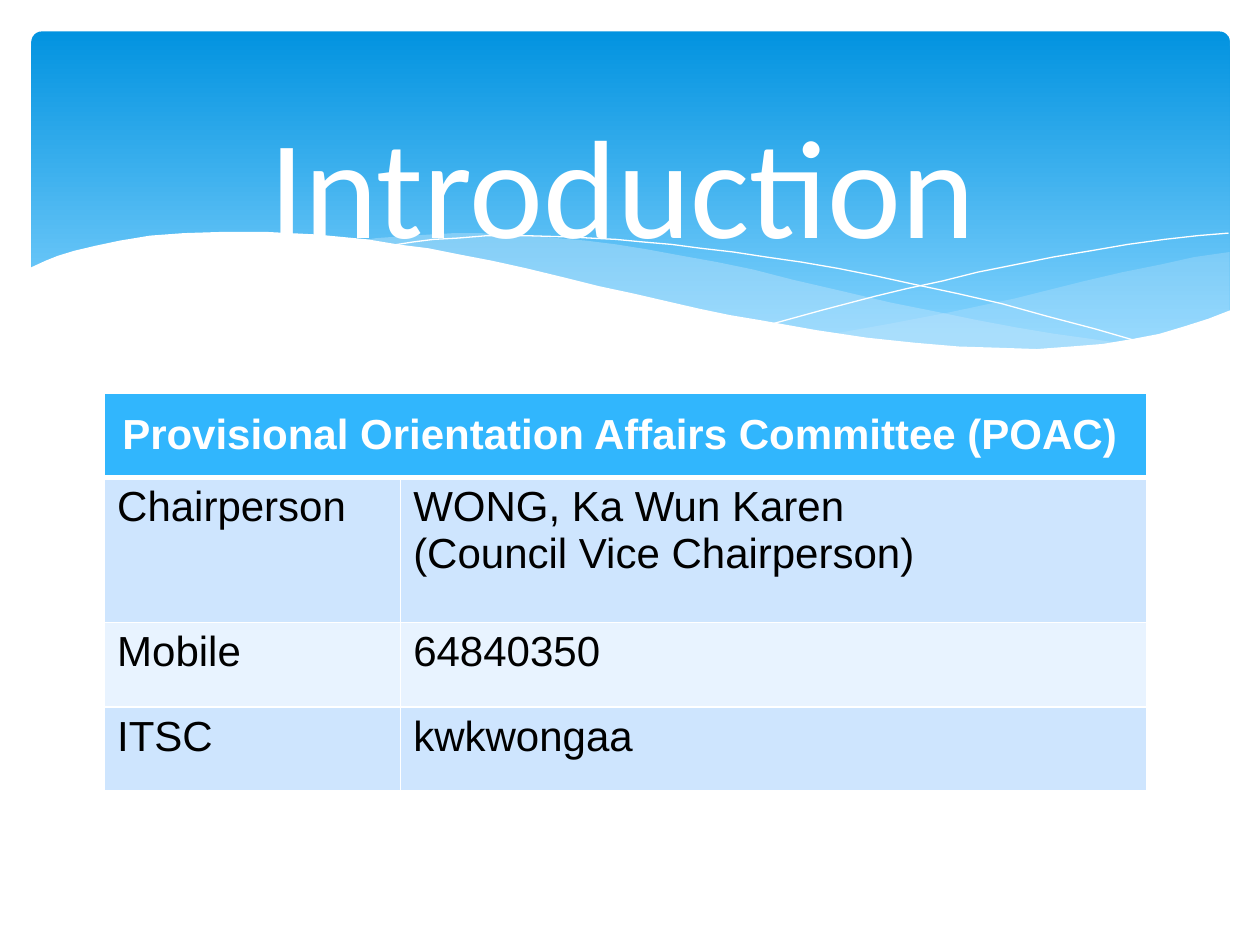
from lxml.etree import SubElement
from pptx import Presentation
from pptx.dml.color import RGBColor
from pptx.enum.shapes import MSO_SHAPE as Preset
from pptx.enum.text import MSO_ANCHOR as Anchor, PP_ALIGN as Align
from pptx.oxml.ns import qn
from pptx.util import Inches, Pt

WHITE = RGBColor(0xFF, 0xFF, 0xFF)
BLACK = RGBColor(0, 0, 0)
DEEP_BLUE = RGBColor(0x02, 0x93, 0xE0)
LIGHT_BLUE = RGBColor(0x83, 0xD3, 0xFE)
WAVE_BLUE = RGBColor(0xC6, 0xE7, 0xFC)
HEADER_BLUE = RGBColor(0x31, 0xB6, 0xFD)
BANDS = RGBColor(0xCE, 0xE5, 0xFE), RGBColor(0xE8, 0xF3, 0xFF)

RIGHT_WAVE = [
    (9.76, 2), (9.48, 2.04), (9.21, 2.1), (8.91, 2.16), (8.61, 2.23), (8.05, 2.37),
    (7.53, 2.48), (7.06, 2.57), (6.61, 2.65), (6.91, 2.69), (7.19, 2.72), (7.45, 2.75),
    (7.69, 2.77), (8.03, 2.78), (8.35, 2.77), (8.63, 2.75), (8.89, 2.72), (9.13, 2.67),
    (9.35, 2.62), (9.49, 2.57), (9.63, 2.52), (9.76, 2.47)]
CENTER_WAVE = [
    (8.93, 2.73), (8.66, 2.69), (8.37, 2.65), (8.07, 2.6), (7.75, 2.54), (7.41, 2.47),
    (7.06, 2.4), (6.68, 2.31), (6.29, 2.22), (5.98, 2.14), (5.69, 2.08), (5.41, 2.03),
    (5.14, 1.98), (4.89, 1.94), (4.65, 1.91), (4.42, 1.89), (4.2, 1.87), (3.99, 1.86),
    (3.8, 1.85), (3.61, 1.85), (3.28, 1.87), (2.99, 1.89), (2.86, 1.91), (3.23, 1.96),
    (3.62, 2.03), (4.04, 2.11), (4.49, 2.22), (4.91, 2.32), (5.3, 2.4), (5.66, 2.48),
    (6.01, 2.55), (6.34, 2.61), (6.65, 2.66), (6.95, 2.7), (7.22, 2.74), (7.48, 2.76),
    (7.73, 2.77), (7.96, 2.78), (8.38, 2.78), (8.67, 2.76)]
FALLING_LINE = [
    (3.09, 1.95), (3.28, 1.92), (3.44, 1.9), (3.63, 1.89), (3.87, 1.87), (4.16, 1.87),
    (4.5, 1.88), (4.89, 1.9), (5.1, 1.92), (5.33, 1.94), (5.56, 1.97), (5.82, 2),
    (6.08, 2.04), (6.36, 2.08), (6.65, 2.13), (6.95, 2.19), (7.27, 2.26), (7.6, 2.33),
    (7.95, 2.41), (8.31, 2.51), (8.69, 2.61), (9.07, 2.72)]
RISING_LINE = [
    (6.13, 2.57), (6.53, 2.46), (6.95, 2.35), (7.2, 2.29), (7.48, 2.23), (7.76, 2.16),
    (8.06, 2.1), (8.36, 2.04), (8.66, 1.99), (8.95, 1.94), (9.24, 1.9), (9.51, 1.87),
    (9.75, 1.85)]
WHITE_WAVE = [
    (9.77, 2.46), (9.59, 2.53), (9.4, 2.59), (9.2, 2.65), (8.99, 2.69), (8.75, 2.73),
    (8.5, 2.75), (8.23, 2.77), (7.93, 2.76), (7.61, 2.75), (7.26, 2.72), (6.88, 2.68),
    (6.48, 2.62), (6.03, 2.54), (5.79, 2.5), (5.55, 2.45), (5.29, 2.39), (5.03, 2.33),
    (4.75, 2.27), (4.47, 2.2), (4.18, 2.13), (3.91, 2.07), (3.65, 2.02), (3.4, 1.97),
    (3.16, 1.94), (2.92, 1.9), (2.71, 1.88), (2.5, 1.86), (2.3, 1.85), (2.11, 1.84),
    (1.77, 1.84), (1.46, 1.85), (1.19, 1.87), (0.95, 1.91), (0.76, 1.95), (0.59, 1.99),
    (0.46, 2.03), (0.36, 2.07), (0.23, 2.13), (0.23, 3.29), (9.77, 3.29)]

COLUMN_WIDTHS = 2.35, 5.92
ROW_HEIGHTS = 0.67, 1.15, 0.67, 0.67
HEADING = "Provisional Orientation Affairs Committee (POAC) "
DETAILS = [
    ("Chairperson", "WONG, Ka Wun Karen \v(Council Vice Chairperson)"),
    ("Mobile", "64840350"),
    ("ITSC", "kwkwongaa"),
]


class SlideBuilder:
    title_font = "Calibri"
    body_font = "Arial"
    body_size = Pt(24)

    def __init__(self, slide):
        self.slide = slide
        self.shapes = slide.shapes

    def banner(self, left, top, width, height):
        shape = self.shapes.add_shape(
            Preset.ROUNDED_RECTANGLE, *map(Inches, (left, top, width, height)))
        shape.shadow.inherit = False
        shape.adjustments[0] = 0.03
        shape.line.fill.background()
        shape.fill.gradient()
        shape.fill.gradient_angle = 270
        stops = zip(shape.fill.gradient_stops, (0, 0.9), (DEEP_BLUE, LIGHT_BLUE))
        for stop, position, color in stops:
            stop.position = position
            stop.color.rgb = color

    def outline(self, points, close):
        start, *rest = [(Inches(x), Inches(y)) for x, y in points]
        builder = self.shapes.build_freeform(*start)
        builder.add_line_segments(rest, close=close)
        shape = builder.convert_to_shape()
        shape.shadow.inherit = False
        return shape

    def wave(self, points, color, opacity=100):
        shape = self.outline(points, True)
        shape.line.fill.background()
        shape.fill.solid()
        shape.fill.fore_color.rgb = color
        if opacity < 100:
            color_element = shape.fill._xPr.find(qn("a:solidFill"))[0]
            SubElement(color_element, qn("a:alpha"), val=str(opacity * 1000))

    def curve(self, points):
        shape = self.outline(points, False)
        shape.fill.background()
        shape.line.color.rgb = WHITE
        shape.line.width = Pt(0)

    def title(self, text, left, top, width, height):
        box = self.shapes.add_textbox(*map(Inches, (left, top, width, height)))
        frame = box.text_frame
        frame.word_wrap = True
        frame.vertical_anchor = Anchor.MIDDLE
        frame.margin_top = frame.margin_bottom = 0
        paragraph = frame.paragraphs[0]
        paragraph.text = text
        paragraph.alignment = Align.CENTER
        paragraph.font.name = self.title_font
        paragraph.font.size = Pt(80)
        paragraph.font.color.rgb = WHITE

    def cell(self, cell, text, fill, color, top=1, bottom=1, bold=False):
        properties = cell._tc.get_or_add_tcPr()
        for side, width in zip("LRTB", (1, 1, top, bottom)):
            line = SubElement(properties, qn(f"a:ln{side}"), w=str(Pt(width)))
            solid = SubElement(line, qn("a:solidFill"))
            SubElement(solid, qn("a:srgbClr"), val=str(WHITE))
        cell.fill.solid()
        cell.fill.fore_color.rgb = fill
        paragraph = cell.text_frame.paragraphs[0]
        paragraph.text = text
        paragraph.font.name = self.body_font
        paragraph.font.size = self.body_size
        paragraph.font.bold = bold
        paragraph.font.color.rgb = color

    def table(self, left, top):
        table = self.shapes.add_table(
            len(ROW_HEIGHTS), len(COLUMN_WIDTHS), Inches(left), Inches(top),
            Inches(sum(COLUMN_WIDTHS)), Inches(sum(ROW_HEIGHTS))).table
        for column, width in zip(table.columns, COLUMN_WIDTHS):
            column.width = Inches(width)
        for row, height in zip(table.rows, ROW_HEIGHTS):
            row.height = Inches(height)
        heading = table.cell(0, 0)
        heading.merge(table.cell(0, 1))
        self.cell(heading, HEADING, HEADER_BLUE, WHITE, bottom=3, bold=True)
        heading.vertical_anchor = Anchor.MIDDLE
        heading.text_frame.paragraphs[0].alignment = Align.CENTER
        for index, texts in enumerate(DETAILS):
            for column, text in enumerate(texts):
                self.cell(table.cell(index + 1, column), text, BANDS[index % 2],
                          BLACK, top=1 if index else 3)


def main():
    presentation = Presentation()
    presentation.slide_width = Inches(10)
    presentation.slide_height = Inches(7.5)
    slide = presentation.slides.add_slide(presentation.slide_layouts[6])
    builder = SlideBuilder(slide)
    builder.banner(0.25, 0.25, 9.51, 2.7)
    builder.wave(RIGHT_WAVE, WAVE_BLUE, 29)
    builder.wave(CENTER_WAVE, WAVE_BLUE, 40)
    builder.curve(FALLING_LINE)
    builder.curve(RISING_LINE)
    builder.wave(WHITE_WAVE, WHITE)
    builder.title("Introduction", 0.44, 0.77, 9, 1.36)
    builder.table(0.83, 3.12)
    presentation.save("out.pptx")


if __name__ == "__main__":
    main()
